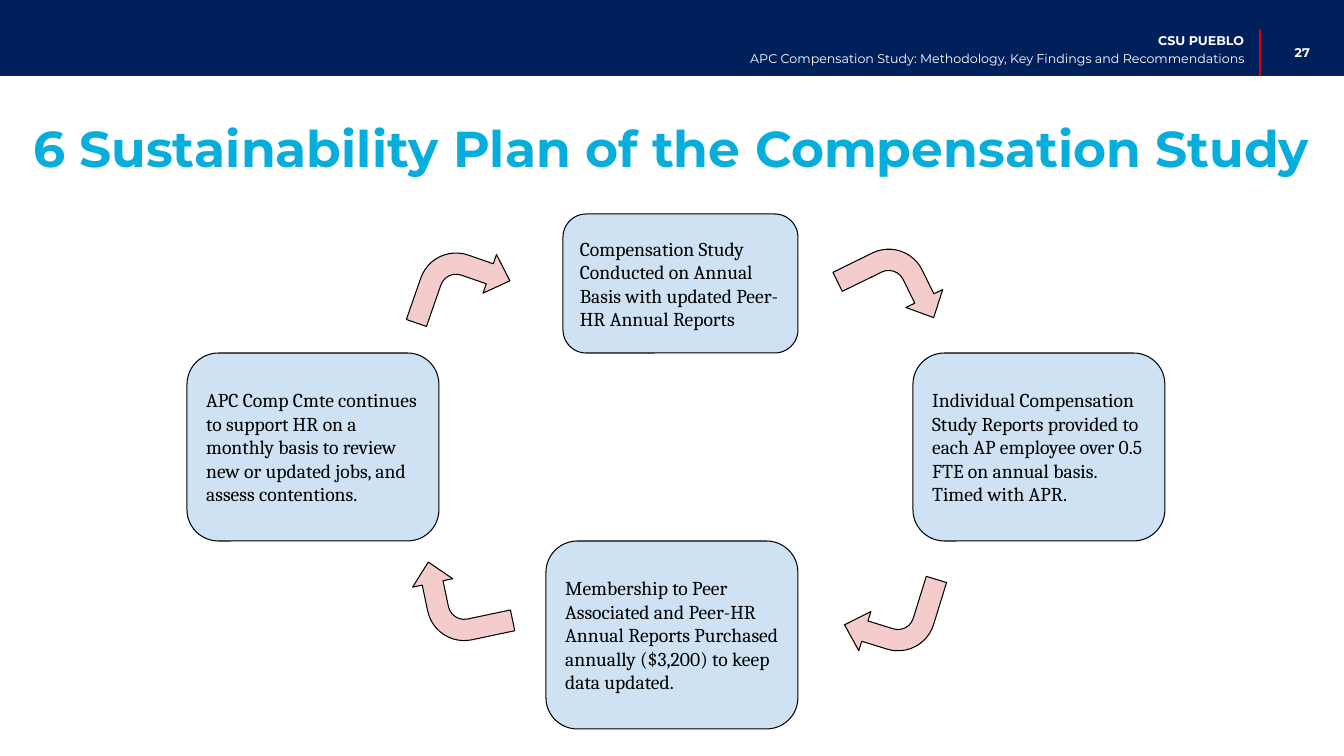
"""Build the compensation study sustainability cycle slide."""
from lxml import etree
from pptx import Presentation
from pptx.dml.color import RGBColor
from pptx.enum.shapes import MSO_CONNECTOR, MSO_SHAPE
from pptx.enum.text import MSO_ANCHOR, MSO_AUTO_SIZE, PP_ALIGN
from pptx.oxml.ns import qn
from pptx.util import Emu, Pt

LEFT, RIGHT = PP_ALIGN.LEFT, PP_ALIGN.RIGHT
TOP, MIDDLE = MSO_ANCHOR.TOP, MSO_ANCHOR.MIDDLE
NAVY = RGBColor(0x00, 0x20, 0x5C)
RED = RGBColor(0xD9, 0x00, 0x00)
CYAN = RGBColor(0x08, 0xAE, 0xDB)
PALE_BLUE = RGBColor(0xCF, 0xE2, 0xF3)
PINK = RGBColor(0xF4, 0xCC, 0xCC)
WHITE = RGBColor(0xFF, 0xFF, 0xFF)
BLACK = RGBColor(0x00, 0x00, 0x00)

EMU_PER_PIXEL = 914400 / 100.8
SLIDE_SIZE = (1344, 756)
BANNER = (0, 0, 1344, 76)
DIVIDER = (1260, 29, 1260, 76)
TITLE_AREA = (33, 124, 1278, 101)
TITLE = "6 Sustainability Plan of the Compensation Study"
HEADER_TEXTS = [
    ("CSU PUEBLO", (1080, 29, 164, 23), MIDDLE, True),
    ("APC Compensation Study: Methodology, Key Findings and Recommendations",
     (689, 51, 555, 23), TOP, False),
    ("27", (1260, 29, 50, 46), MIDDLE, True),
]
STEPS = [
    ("Compensation Study Conducted on Annual Basis with updated Peer-HR Annual Reports",
     (563, 214, 235, 139)),
    ("Individual Compensation Study Reports provided to each AP employee over 0.5 FTE "
     "on annual basis. Timed with APR.", (913, 353, 252, 188)),
    ("Membership to Peer Associated and Peer-HR Annual Reports Purchased annually "
     "($3,200) to keep data updated.", (546, 541, 252, 188)),
    ("APC Comp Cmte continues to support HR on a monthly basis to review new or updated "
     "jobs, and assess contentions.", (187, 353, 252, 188)),
]
ARROW_SIZE = (85, 91)
ARROWS = [(850, 245, 63.9), (419, 245, 19.2), (419, 553, 258.1), (850, 568, 197.2)]
ARROW_ADJUSTMENTS = (0.25, 0.241, 0.25, 0.438)
STEP_ADJUSTMENTS = (0.167,)

HEADER_FONT = {"name": "Montserrat", "size": Pt(9)}
TITLE_FONT = {"name": "Montserrat", "size": Pt(36), "bold": True}
STEP_FONT = {"name": "Cambria", "size": Pt(14)}


def scaled(lengths):
    return [Emu(round(length * EMU_PER_PIXEL)) for length in lengths]


def set_attributes(target, values):
    for name, value in values.items():
        setattr(target, name, value)


def write_text(shape, text, font, color, anchor=MIDDLE, alignment=LEFT, inset=0):
    frame = shape.text_frame
    margin, = scaled([inset])
    set_attributes(frame, {
        "text": text, "word_wrap": True, "auto_size": MSO_AUTO_SIZE.NONE,
        "vertical_anchor": anchor, "margin_left": margin, "margin_top": margin,
        "margin_right": margin, "margin_bottom": margin,
    })
    paragraph = frame.paragraphs[0]
    paragraph.alignment = alignment
    set_attributes(paragraph.runs[0].font, font)
    paragraph.runs[0].font.color.rgb = color
    return paragraph


def add_filled_shape(slide, kind, area, fill, outline=None, adjustments=()):
    shape = slide.shapes.add_shape(kind, *scaled(area))
    shape.shadow.inherit = False
    shape.fill.solid()
    shape.fill.fore_color.rgb = fill
    if outline is None:
        shape.line.fill.background()
    else:
        shape.line.color.rgb = outline
        shape.line.width = Pt(0.75)
    for index, value in enumerate(adjustments):
        shape.adjustments[index] = value
    return shape


def add_header(slide):
    add_filled_shape(slide, MSO_SHAPE.RECTANGLE, BANNER, NAVY)
    divider = slide.shapes.add_connector(MSO_CONNECTOR.STRAIGHT, *scaled(DIVIDER))
    divider.line.color.rgb = RED
    divider.line.width = Pt(0.75)
    etree.SubElement(divider._element.spPr, qn("a:effectLst"))
    for text, area, anchor, bold in HEADER_TEXTS:
        box = slide.shapes.add_textbox(*scaled(area))
        write_text(box, text, {**HEADER_FONT, "bold": bold}, WHITE, anchor, RIGHT)


def add_title(slide):
    title = slide.shapes.title
    names = ("left", "top", "width", "height")
    set_attributes(title, dict(zip(names, scaled(TITLE_AREA))))
    paragraph = write_text(title, TITLE, TITLE_FONT, CYAN, TOP)
    paragraph.line_spacing = 0.9


def add_cycle(slide):
    for text, area in STEPS:
        step = add_filled_shape(slide, MSO_SHAPE.ROUNDED_RECTANGLE, area, PALE_BLUE,
                                BLACK, STEP_ADJUSTMENTS)
        write_text(step, text, STEP_FONT, BLACK, inset=10)
    for left, top, rotation in ARROWS:
        arrow = add_filled_shape(slide, MSO_SHAPE.BENT_ARROW, (left, top, *ARROW_SIZE),
                                 PINK, BLACK, ARROW_ADJUSTMENTS)
        arrow.rotation = rotation


def main():
    presentation = Presentation()
    presentation.slide_width, presentation.slide_height = scaled(SLIDE_SIZE)
    slide = presentation.slides.add_slide(presentation.slide_layouts[5])
    add_header(slide)
    add_title(slide)
    add_cycle(slide)
    presentation.save("out.pptx")


if __name__ == "__main__":
    main()
